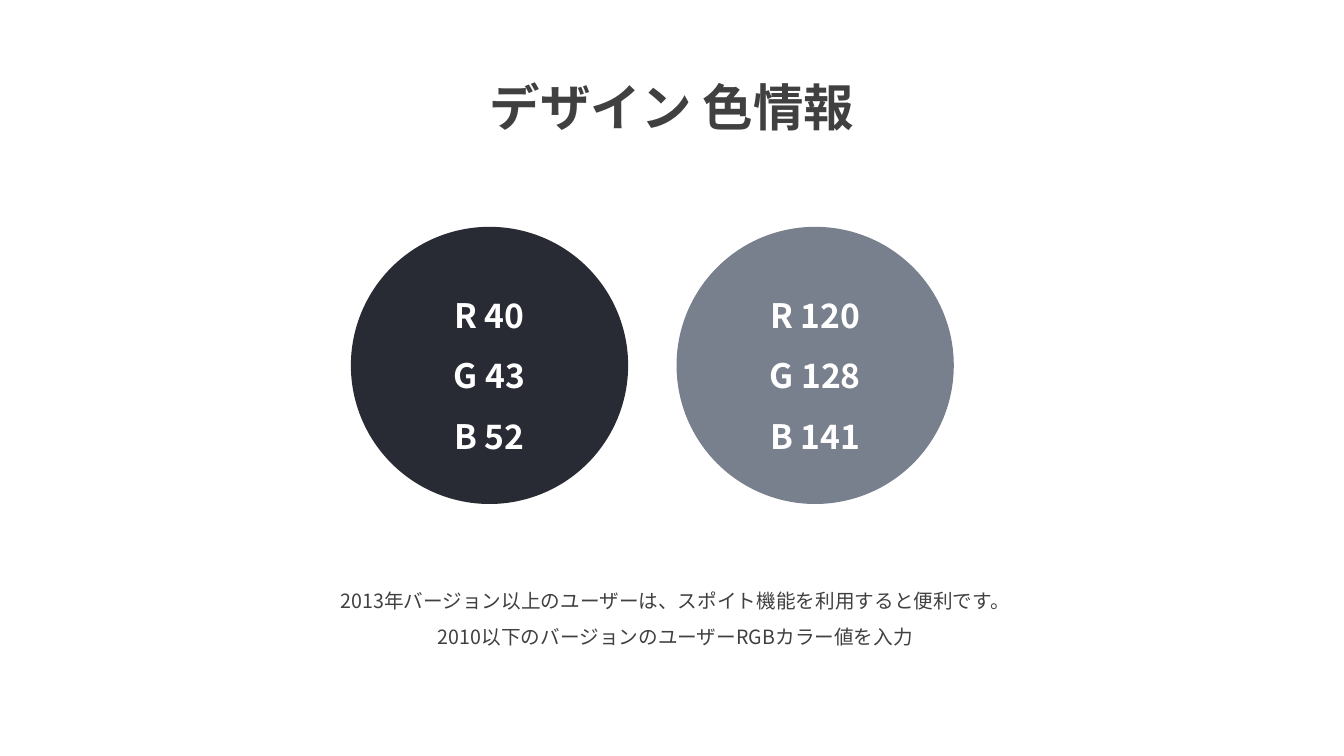
"""Build a slide that shows the two design colours with their RGB values."""
from lxml import etree
from pptx import Presentation
from pptx import util as u
from pptx.dml.color import RGBColor
from pptx.enum import shapes, text
from pptx.oxml import ns

WHITE = RGBColor(255, 255, 255)
INK = RGBColor(64, 64, 64)
NAVY = RGBColor(40, 43, 52)
GREY = RGBColor(120, 128, 141)

FONT = "Noto Sans CJK KR"
DIAMETER = 2.75
SWATCH_TOP = 2.25
SWATCHES = [(3.48, NAVY), (6.71, GREY)]
HINTS = [
    "2013年バージョン以上のユーザーは、スポイト機能を利用すると便利です。",
    "2010以下のバージョンのユーザーRGBカラー値を入力",
]


def write(frame, lines, size=14, color=INK, bold=False, anchor=text.MSO_ANCHOR.TOP,
          fit=text.MSO_AUTO_SIZE.SHAPE_TO_FIT_TEXT):
    frame.word_wrap = True
    frame.auto_size = fit
    frame.vertical_anchor = anchor
    for index, line in enumerate(lines):
        para = frame.add_paragraph() if index else frame.paragraphs[0]
        para.alignment = text.PP_ALIGN.CENTER
        para.line_spacing = 1.5
        para.space_before = u.Pt(0)
        span = para.add_run()
        span.text = line
        span.font.size = u.Pt(size)
        span.font.bold = bold
        span.font.color.rgb = color
        span.font.name = FONT
        etree.SubElement(span.font._element, ns.qn("a:ea"), typeface=FONT)


class ColourSlide:
    def __init__(self, deck):
        self.slide = deck.slides.add_slide(deck.slide_layouts[5])

    def title(self, words, left, top, width, height):
        box = self.slide.shapes.title
        box.left, box.top = u.Inches(left), u.Inches(top)
        box.width, box.height = u.Inches(width), u.Inches(height)
        write(box.text_frame, [words], size=36, bold=True)

    def swatch(self, left, color):
        circle = self.slide.shapes.add_shape(
            shapes.MSO_SHAPE.OVAL, u.Inches(left), u.Inches(SWATCH_TOP),
            u.Inches(DIAMETER), u.Inches(DIAMETER))
        circle.shadow.inherit = False
        circle.fill.solid()
        circle.fill.fore_color.rgb = color
        circle.line.fill.background()
        values = [f"{channel} {value}" for channel, value in zip("RGB", color)]
        write(circle.text_frame, values, size=24, color=WHITE, bold=True,
              anchor=text.MSO_ANCHOR.MIDDLE, fit=text.MSO_AUTO_SIZE.NONE)

    def caption(self, lines, left, top, width, height):
        box = self.slide.shapes.add_textbox(
            u.Inches(left), u.Inches(top), u.Inches(width), u.Inches(height))
        write(box.text_frame, lines)


def main():
    deck = Presentation()
    deck.slide_width, deck.slide_height = u.Inches(13.33), u.Inches(7.5)
    page = ColourSlide(deck)
    page.title("デザイン 色情報", 4.24, 0.4, 4.85, 0.91)
    for left, color in SWATCHES:
        page.swatch(left, color)
    page.caption(HINTS, 2.52, 5.68, 8.36, 0.77)
    deck.save("out.pptx")


if __name__ == "__main__":
    main()
